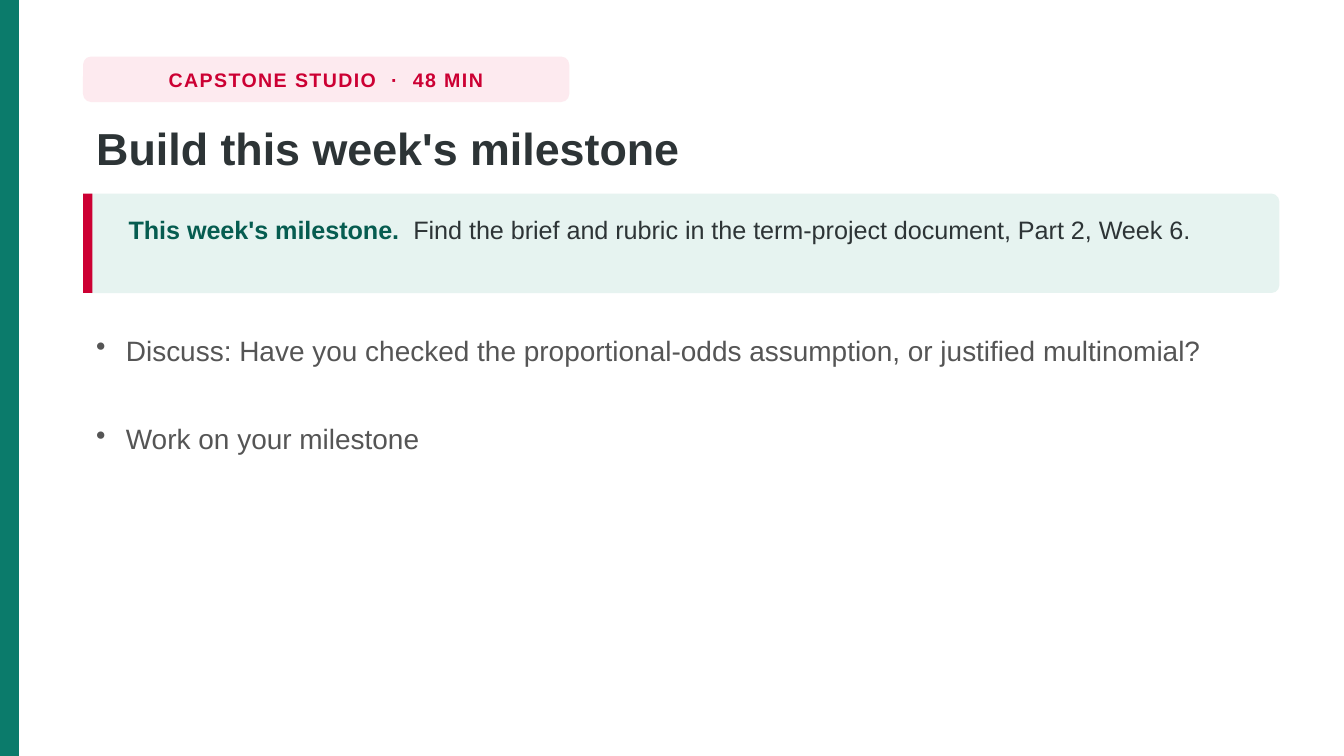
from lxml import etree
from pptx import Presentation
from pptx.dml.color import RGBColor
from pptx.enum.shapes import MSO_SHAPE
from pptx.enum.text import MSO_ANCHOR, PP_ALIGN
from pptx.oxml.ns import qn
from pptx.util import Cm, Pt

RECT, ROUND = MSO_SHAPE.RECTANGLE, MSO_SHAPE.ROUNDED_RECTANGLE
MIDDLE, CENTER = MSO_ANCHOR.MIDDLE, PP_ALIGN.CENTER

COLORS = {
    "teal": "0B7B6B", "deep": "065C50", "mint": "E6F3F0",
    "red": "CC0033", "pink": "FDEAEF", "ink": "2D3436", "gray": "555555",
}
FONT = "Arial"

TAG = "CAPSTONE STUDIO  ·  48 MIN"
TITLE = "Build this week's milestone"
NOTE = [
    ("This week's milestone.  ", "deep", True),
    ("Find the brief and rubric in the term-project document, Part 2, Week 6.", "ink", False),
]
TASKS = [
    ("Discuss: Have you checked the proportional-odds assumption, or justified multinomial?", 1.47),
    ("Work on your milestone", 0.79),
]

WIDE, HIGH = 25.4, 14.29
LEFT, SPAN = 1.57, 22.61
NOTE_TOP, NOTE_HIGH = 3.66, 1.88
TASK_TOP, TASK_GAP = 6.1, 0.2
INDENT = Cm(0.56)


def color(name):
    return RGBColor.from_string(COLORS[name])


def block(slide, kind, fill, x, y, w, h, round_by=None):
    shape = slide.shapes.add_shape(kind, Cm(x), Cm(y), Cm(w), Cm(h))
    shape.shadow.inherit = False
    shape.fill.solid()
    shape.fill.fore_color.rgb = color(fill)
    shape.line.fill.background()
    if round_by:
        shape.adjustments[0] = round_by
    return shape


def write(frame, runs, size, space=None, bullet=False):
    para = frame.paragraphs[0]
    if bullet:
        props = para._p.get_or_add_pPr()
        props.set("marL", str(INDENT))
        props.set("indent", str(-INDENT))
        etree.SubElement(props, qn("a:buChar")).set("char", "•")
    if space:
        para.line_spacing = space
    para.font.name = FONT
    para.font.size = Pt(size)
    for text, tint, bold in runs:
        run = para.add_run()
        run.text = text
        run.font.bold = bold
        run.font.color.rgb = color(tint)
    return para


def text_box(slide, x, y, w, h):
    frame = slide.shapes.add_textbox(Cm(x), Cm(y), Cm(w), Cm(h)).text_frame
    frame.word_wrap = True
    return frame


def main():
    deck = Presentation()
    deck.slide_width, deck.slide_height = Cm(WIDE), Cm(HIGH)
    slide = deck.slides.add_slide(deck.slide_layouts[6])

    block(slide, RECT, "teal", 0, 0, 0.36, HIGH)

    tag = block(slide, ROUND, "pink", LEFT, 1.07, 9.19, 0.86, 0.18).text_frame
    tag.word_wrap = False
    tag.vertical_anchor = MIDDLE
    para = write(tag, [(TAG, "red", True)], 10.5)
    para.alignment = CENTER
    para.runs[0]._r.get_or_add_rPr().set("spc", "80")

    title = text_box(slide, LEFT, 2.13, SPAN, 1.42)
    write(title, [(TITLE, "ink", True)], 24, 1.02)

    block(slide, ROUND, "mint", LEFT, NOTE_TOP, SPAN, NOTE_HIGH, 0.08)
    block(slide, RECT, "red", LEFT, NOTE_TOP, 0.18, NOTE_HIGH)
    note = text_box(slide, LEFT + 0.61, NOTE_TOP + 0.18, 21.34, 1.52)
    write(note, NOTE, 13.5, 1.14)

    top = TASK_TOP
    for text, high in TASKS:
        task = text_box(slide, LEFT, top, SPAN, high)
        write(task, [(text, "gray", False)], 15, 1.12, True)
        top += high + TASK_GAP

    deck.save("out.pptx")


if __name__ == "__main__":
    main()
